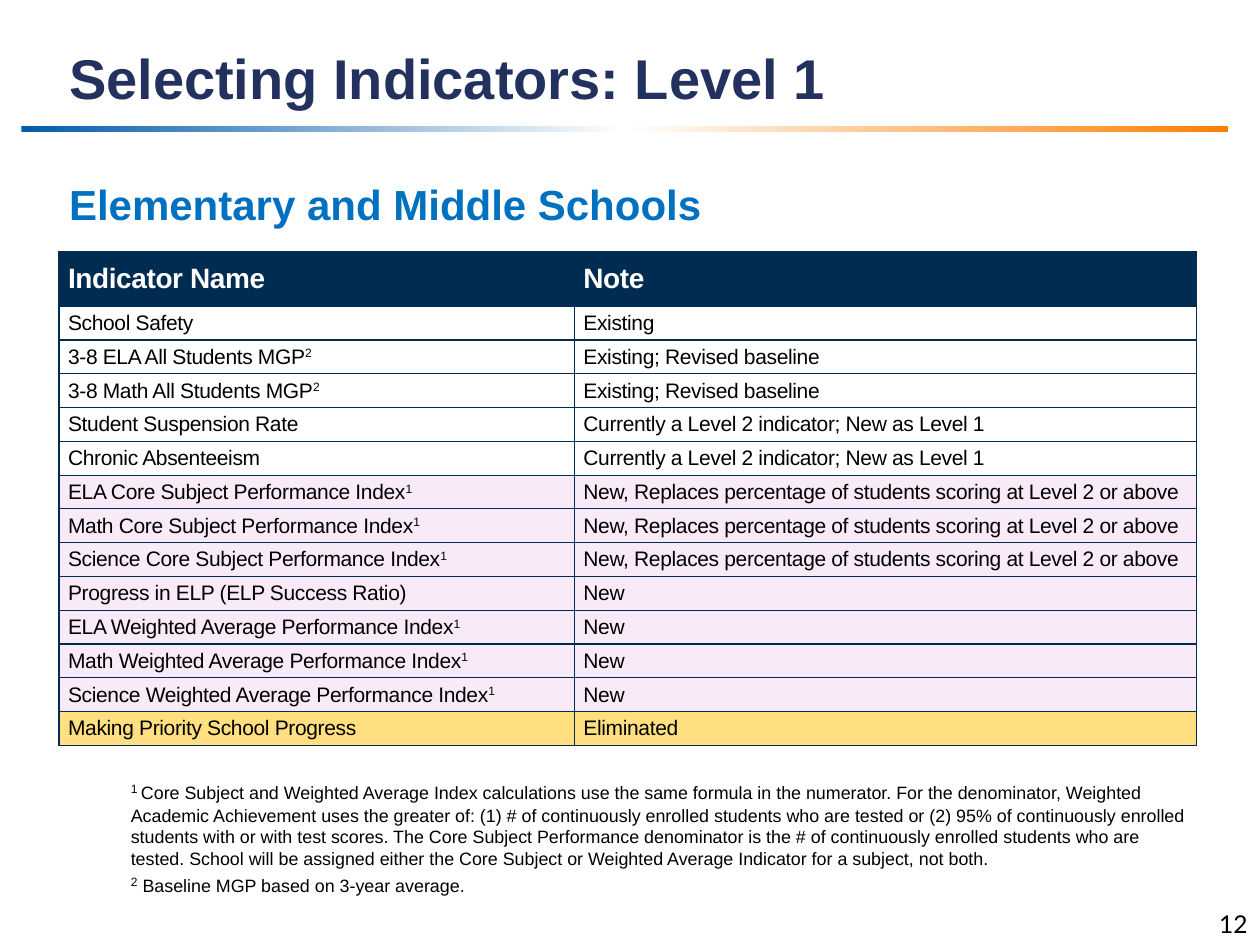
from copy import deepcopy

from pptx import Presentation
from pptx.dml.color import RGBColor
from pptx.enum.shapes import MSO_SHAPE
from pptx.enum.text import MSO_ANCHOR, PP_ALIGN
from pptx.oxml import parse_xml
from pptx.oxml.ns import nsdecls
from pptx.util import Pt


def rgb(color):
    """Turn a hex string into a colour."""
    return RGBColor.from_string(color)


def add_run(p, text, size, color, bold=False, font="Arial", **attrs):
    """Add one formatted run with optional raw run attributes."""
    r = p.add_run()
    r.text = text
    r.font.size, r.font.bold, r.font.name = Pt(size), bold, font
    r.font.color.rgb = rgb(color)
    for name, value in attrs.items():
        r.font._element.set(name, value)


prs = Presentation()
prs.slide_width, prs.slide_height = Pt(720), Pt(540)
s = prs.slides.add_slide(prs.slide_layouts[6])

sp = s.shapes.add_shape(MSO_SHAPE.RECTANGLE, Pt(12.24), Pt(72), Pt(689.76), Pt(3.6))
sp.shadow.inherit = False
sp.line.fill.background()
sp.fill.gradient()
sp.fill.gradient_angle = 0
first_stop = sp._element.xpath(".//a:gs")[0]
first_stop.addnext(deepcopy(first_stop))
stops = [(0, "045CAA"), (0.5, "FFFFFF"), (1, "FD7F03")]
for stop, (position, color) in zip(sp.fill.gradient_stops, stops):
    stop.position = position
    stop.color.rgb = rgb(color)

frames = []
for x, y, w, h in [(32.4, 0, 607, 67), (32.4, 95.8, 619.2, 40),
                   (552.2, 516.2, 167.8, 23.8), (67.7, 432, 616.3, 82)]:
    tf = s.shapes.add_textbox(Pt(x), Pt(y), Pt(w), Pt(h)).text_frame
    tf.word_wrap = True
    frames.append(tf)
title, subtitle, number, notes = frames

title.vertical_anchor = MSO_ANCHOR.BOTTOM
title.paragraphs[0].line_spacing = Pt(36)
add_run(title.paragraphs[0], "Selecting Indicators: Level 1", 32, "22315E", True)

subtitle.margin_top = Pt(6)
add_run(subtitle.paragraphs[0], "Elementary and Middle Schools", 24, "0070C0", True)

number.paragraphs[0].alignment = PP_ALIGN.RIGHT
add_run(number.paragraphs[0], "12", 14, "000000", font="Lato")

REVISED = "Existing; Revised baseline"
PROMOTED = "Currently a Level 2 indicator; New as Level 1"
REPLACES = "New, Replaces percentage of students scoring at Level 2 or above"
PINK, AMBER = "F4D6F3", "FFC000"
rows = [
    ("Indicator Name", "", "Note", "002C51"),
    ("School Safety", "", "Existing", None),
    ("3-8 ELA All Students MGP", "2", REVISED, None),
    ("3-8 Math All Students MGP", "2", REVISED, None),
    ("Student Suspension Rate", "", PROMOTED, None),
    ("Chronic Absenteeism", "", PROMOTED, None),
    ("ELA Core Subject Performance Index", "1", REPLACES, PINK),
    ("Math Core Subject Performance Index", "1", REPLACES, PINK),
    ("Science Core Subject Performance Index", "1", REPLACES, PINK),
    ("Progress in ELP (ELP Success Ratio)", "", "New", PINK),
    ("ELA Weighted Average Performance Index", "1", "New", PINK),
    ("Math Weighted Average Performance Index", "1", "New", PINK),
    ("Science Weighted Average Performance Index", "1", "New", PINK),
    ("Making Priority School Progress", "", "Eliminated", AMBER),
]
tbl = s.shapes.add_table(len(rows), 2, Pt(33.7), Pt(144), Pt(650.2), Pt(282.16)).table
tbl.horz_banding = False
tbl.columns[0].width, tbl.columns[1].width = Pt(294.5), Pt(355.7)
for i, (name, mark, note, fill) in enumerate(rows):
    header = i == 0
    tbl.rows[i].height = Pt(31 if header else 19.32)
    size, color = (16, "FFFFFF") if header else (12, "000000")
    for j, (text, sup) in enumerate([(name, mark), (note, "")]):
        cell = tbl.cell(i, j)
        cell.vertical_anchor = MSO_ANCHOR.MIDDLE
        cell.margin_left = cell.margin_right = Pt(5.2)
        cell.margin_top = cell.margin_bottom = 0
        p = cell.text_frame.paragraphs[0]
        add_run(p, text, size, color, header, spc="-20")
        if sup:
            add_run(p, sup, size, color, spc="-20", baseline="30000")
        tcPr = cell._tc.get_or_add_tcPr()
        if fill:
            cell.fill.solid()
            cell.fill.fore_color.rgb = rgb(fill)
            if not header:
                tcPr.xpath(".//a:srgbClr")[0].append(
                    parse_xml(f'<a:alpha {nsdecls("a")} val="50000"/>'))
        else:
            cell.fill.background()
        for k, side in enumerate("LRTB"):
            inner = side == "LR"[1 - j]
            line, width = ("002C51", 1) if inner else ("002B4F", 0.75)
            tcPr.insert(k, parse_xml(
                f'<a:ln{side} {nsdecls("a")} w="{Pt(width)}"><a:solidFill>'
                f'<a:srgbClr val="{line}"/></a:solidFill></a:ln{side}>'))

notes.margin_top = Pt(15)
footnotes = [
    ("1 ", "Core Subject and Weighted Average Index calculations use the same formula in the "
     "numerator. For the denominator, Weighted Academic Achievement uses the greater of: "
     "(1) # of continuously enrolled students who are tested or (2) 95% of continuously "
     "enrolled students with or with test scores. The Core Subject Performance denominator "
     "is the # of continuously enrolled students who are tested. School will be assigned "
     "either the Core Subject or Weighted Average Indicator for a subject, not both."),
    ("2", " Baseline MGP based on 3-year average."),
]
for i, (mark, text) in enumerate(footnotes):
    p = notes.add_paragraph() if i else notes.paragraphs[0]
    p.line_spacing = Pt(12.4)
    if i:
        p.space_before = Pt(3.6)
    add_run(p, mark, 12, "000000", baseline="30000")
    add_run(p, text, 10.2, "000000")

prs.save("out.pptx")
